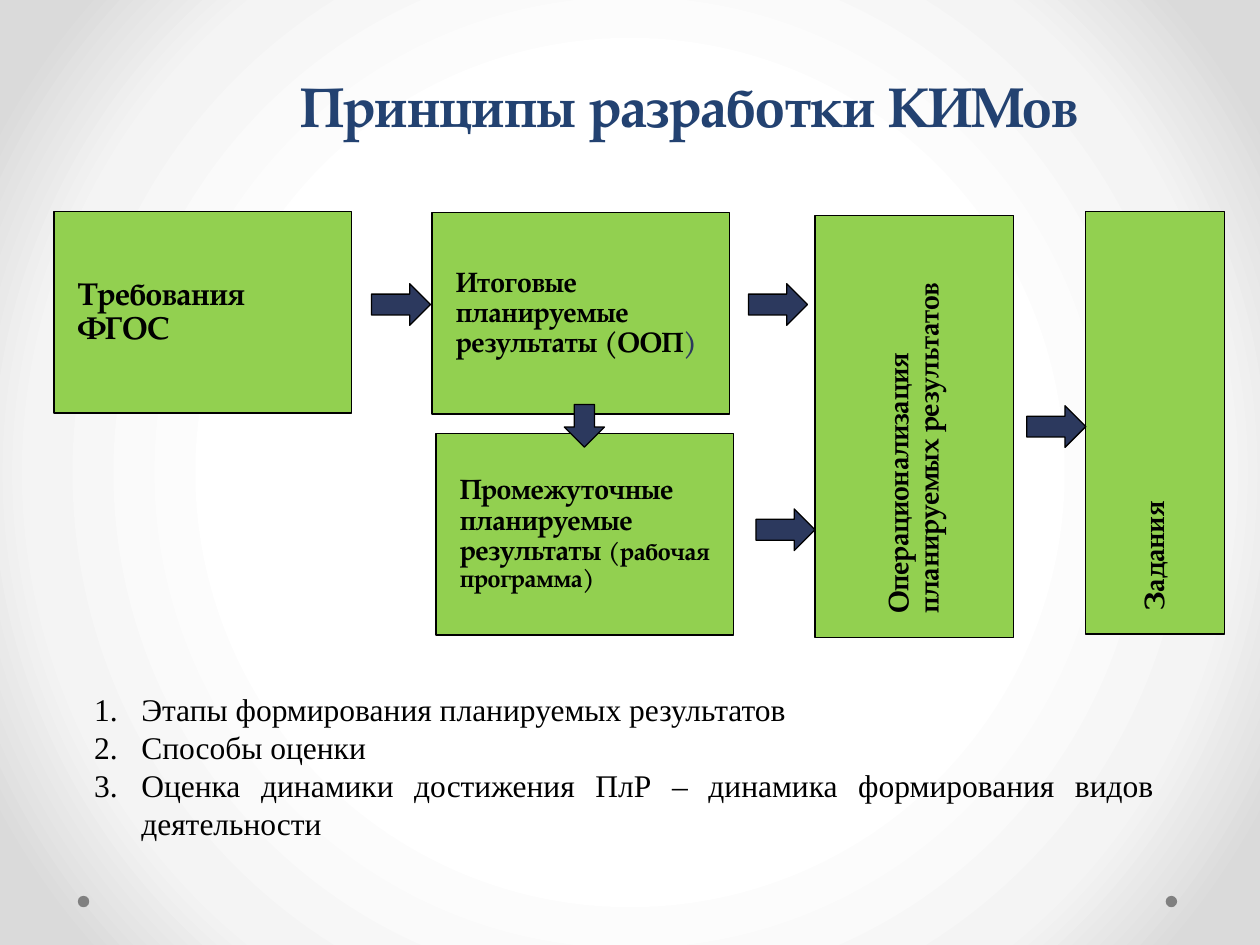
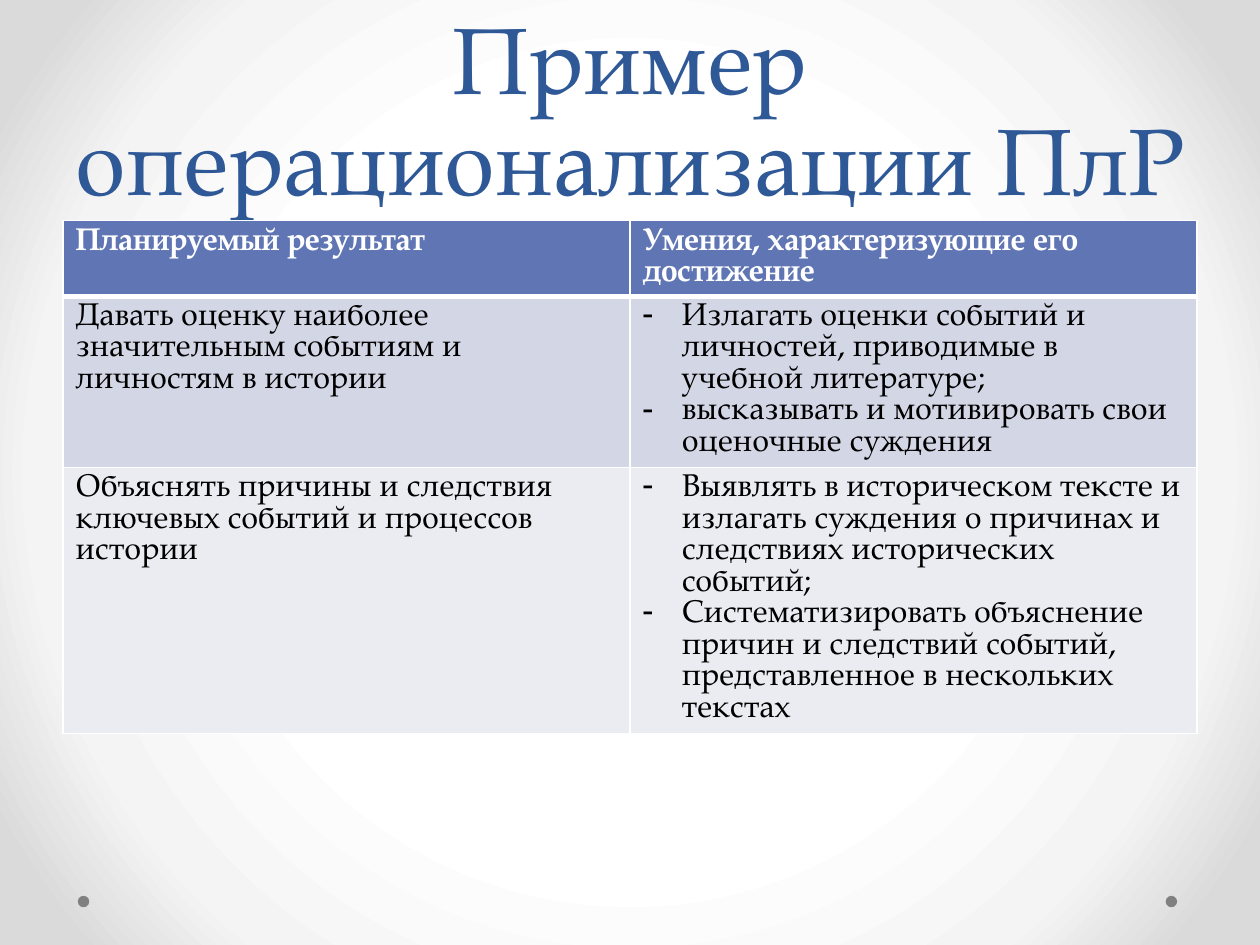
from dataclasses import dataclass

from lxml.etree import SubElement
from pptx import Presentation
from pptx.dml.color import RGBColor
from pptx.enum.shapes import MSO_SHAPE as Preset
from pptx.enum.text import MSO_ANCHOR as Anchor, MSO_AUTO_SIZE as AutoSize, PP_ALIGN as Align
from pptx.oxml import parse_xml
from pptx.oxml.ns import nsdecls, qn
from pptx.util import Cm, Pt


@dataclass(frozen=True)
class Theme:
    font: str = "TeX Gyre Pagella"
    list_font: str = "Times New Roman"
    ink: str = "000000"
    white: str = "FFFFFF"
    navy: str = "2C395E"
    box: str = "92D050"
    dot: str = "808080"
    header: str = "6076B4"
    rows: tuple = ("D2D6E5", "EAECF2")
    glow: tuple = ((50, "FFFFFF"), (76, "F4F4F4"), (92, "DADADA"))
    body: int = 18
    step: int = 16
    note: int = 14


THEME = Theme()

PRINCIPLES_TITLE = dict(text="Принципы разработки КИМов", place=(3.71, 0.71, 20.37, 2.21),
                        size=32, color="234271", bold=True)
EXAMPLE_TITLE = dict(text="Пример операционализации ПлР", place=(1.27, 0, 22.86, 4.45),
                     size=54, color="2F5897", spacing=Pt(58))

WIDE, TALL = (6, 4.06), (4.01, 8.51)
STAGES = [
    ((1.09, 4.27), WIDE, False, [("Требования ФГОС", THEME.body, THEME.ink)]),
    ((8.71, 4.29), WIDE, False, [("Итоговые планируемые результаты (ООП", THEME.step, THEME.ink),
                                 (")", THEME.step, THEME.navy)]),
    ((16.43, 4.34), TALL, True, [("Операционализация планируемых результатов",
                                  THEME.step, THEME.ink)]),
    ((21.89, 4.27), (2.79, 8.51), True, [("Задания", THEME.step, THEME.ink)]),
    ((8.79, 8.74), WIDE, False, [("Промежуточные планируемые результаты ", THEME.step, THEME.ink),
                                 ("(рабочая программа)", THEME.note, THEME.ink)]),
]
ARROW = (1.19, 0.84)
ARROWS = [
    ((7.49, 5.72), ARROW, 0),
    ((15.09, 5.72), ARROW, 0),
    ((15.24, 10.26), ARROW, 0),
    ((20.7, 8.18), ARROW, 0),
    ((11.35, 8.18), (0.86, 0.81), 90),
]
TOPICS = [
    "Этапы формирования планируемых результатов",
    "Способы оценки",
    "Оценка динамики достижения ПлР – динамика формирования видов деятельности",
]

SKILLS_HEAD = ("Планируемый результат", "Умения, характеризующие его достижение")
SKILLS = [
    ("Давать оценку наиболее значительным событиям и личностям в истории",
     ["Излагать оценки событий и личностей, приводимые в учебной литературе;",
      "высказывать и мотивировать свои оценочные суждения"]),
    ("Объяснять причины и следствия ключевых событий и процессов истории",
     ["Выявлять в историческом тексте и излагать суждения о причинах и следствиях "
      "исторических событий;",
      "Систематизировать объяснение причин и следствий событий, представленное "
      "в нескольких текстах"]),
]
SKILLS_PLACE = (1.27, 4.45, 22.86, 10.31)
SKILLS_HEIGHTS = (1.5, 3.45, 5.36)


def rgb(color):
    return RGBColor.from_string(color)


def cms(*lengths):
    return [Cm(length) for length in lengths]


def style(run, size, color, bold=False, font=THEME.font):
    run.font.name, run.font.size, run.font.bold = font, Pt(size), bold
    run.font.color.rgb = rgb(color)


def set_bullet(paragraph, indent, tag, **attributes):
    props = paragraph._p.get_or_add_pPr()
    props.set("marL", str(Cm(indent)))
    props.set("indent", str(-Cm(indent)))
    SubElement(props, qn(tag), attributes)


def add_figure(slide, preset, place, fill, outline=None):
    figure = slide.shapes.add_shape(preset, *cms(*place))
    figure.shadow.inherit = False
    figure.fill.solid()
    figure.fill.fore_color.rgb = rgb(fill)
    if outline:
        figure.line.color.rgb = rgb(outline)
        figure.line.width = Pt(0.75)
    else:
        figure.line.fill.background()
    return figure


def set_background(master):
    stops = "".join(f'<a:gs pos="{at * 1000}"><a:srgbClr val="{color}"/></a:gs>'
                    for at, color in THEME.glow)
    content = master._element.cSld
    for old in content.findall(qn("p:bg")):
        content.remove(old)
    content.insert(0, parse_xml(
        f'<p:bg {nsdecls("p", "a")}><p:bgPr><a:gradFill rotWithShape="1"><a:gsLst>{stops}</a:gsLst>'
        '<a:path path="circle"><a:fillToRect l="50000" t="50000" r="50000" b="50000"/></a:path>'
        '</a:gradFill><a:effectLst/></p:bgPr></p:bg>'))


def add_slide(deck, text, place, size, color, bold=False, spacing=1.0):
    slide = deck.slides.add_slide(deck.slide_layouts[5])
    for left in (23.5, 1.57):
        add_figure(slide, Preset.OVAL, (left, 18.06, 0.23, 0.23), THEME.dot)
    title = slide.shapes.title
    title.left, title.top, title.width, title.height = cms(*place)
    frame = title.text_frame
    frame.text = text
    frame.auto_size = AutoSize.NONE
    frame.vertical_anchor = Anchor.BOTTOM
    heading = frame.paragraphs[0]
    heading.alignment, heading.line_spacing = Align.CENTER, spacing
    style(heading.runs[0], size, color, bold)
    return slide


def add_stage(slide, corner, size, upright, parts):
    frame = add_figure(slide, Preset.RECTANGLE, corner + size, THEME.box, THEME.ink).text_frame
    frame.word_wrap = True
    frame.vertical_anchor = Anchor.MIDDLE
    frame.margin_left = frame.margin_right = frame.margin_top = frame.margin_bottom = Cm(0.48)
    if upright:
        frame._txBody.bodyPr.set("vert", "vert270")
    label = frame.paragraphs[0]
    label.alignment, label.line_spacing = Align.LEFT, 0.9
    for text, points, color in parts:
        run = label.add_run()
        run.text = text
        style(run, points, color, bold=True)


def add_topics(slide):
    frame = slide.shapes.add_textbox(*cms(1.65, 13.79, 21.87, 3.33)).text_frame
    frame.word_wrap = True
    frame.text = "\n".join(TOPICS)
    for topic in frame.paragraphs:
        topic.alignment = Align.JUSTIFY
        set_bullet(topic, 0.95, "a:buAutoNum", type="arabicPeriod")
        style(topic.runs[0], THEME.body, THEME.ink, font=THEME.list_font)


def set_borders(cell, top, bottom):
    props = cell._tc.get_or_add_tcPr()
    for side, width in (("L", 1), ("R", 1), ("T", top), ("B", bottom)):
        line = SubElement(props, qn(f"a:ln{side}"), w=str(Pt(width)))
        SubElement(SubElement(line, qn("a:solidFill")), qn("a:srgbClr"), val=THEME.white)


def fill_cell(cell, content, row):
    is_head = row == 0
    set_borders(cell, 3 if row == 1 else 1, 3 if is_head else 1)
    cell.fill.solid()
    cell.fill.fore_color.rgb = rgb(THEME.header if is_head else THEME.rows[row - 1])
    listed = isinstance(content, list)
    cell.text_frame.text = "\n".join(content) if listed else content
    for line in cell.text_frame.paragraphs:
        line.line_spacing = Pt(THEME.body)
        if listed:
            set_bullet(line, 0.79, "a:buChar", char="-")
        style(line.runs[0], THEME.body, THEME.white if is_head else THEME.ink, is_head)


def add_skills(slide):
    rows = [SKILLS_HEAD, *SKILLS]
    table = slide.shapes.add_table(len(rows), len(SKILLS_HEAD), *cms(*SKILLS_PLACE)).table
    for row, (contents, height) in enumerate(zip(rows, SKILLS_HEIGHTS)):
        table.rows[row].height = Cm(height)
        for column, content in enumerate(contents):
            fill_cell(table.cell(row, column), content, row)


def main():
    deck = Presentation()
    deck.slide_width, deck.slide_height = cms(25.4, 19.05)
    set_background(deck.slide_master)

    principles = add_slide(deck, **PRINCIPLES_TITLE)
    add_topics(principles)
    for stage in STAGES:
        add_stage(principles, *stage)
    for corner, size, turn in ARROWS:
        arrow = add_figure(principles, Preset.RIGHT_ARROW, corner + size, THEME.navy, THEME.ink)
        arrow.rotation = turn

    add_skills(add_slide(deck, **EXAMPLE_TITLE))
    deck.save("out.pptx")


if __name__ == "__main__":
    main()
